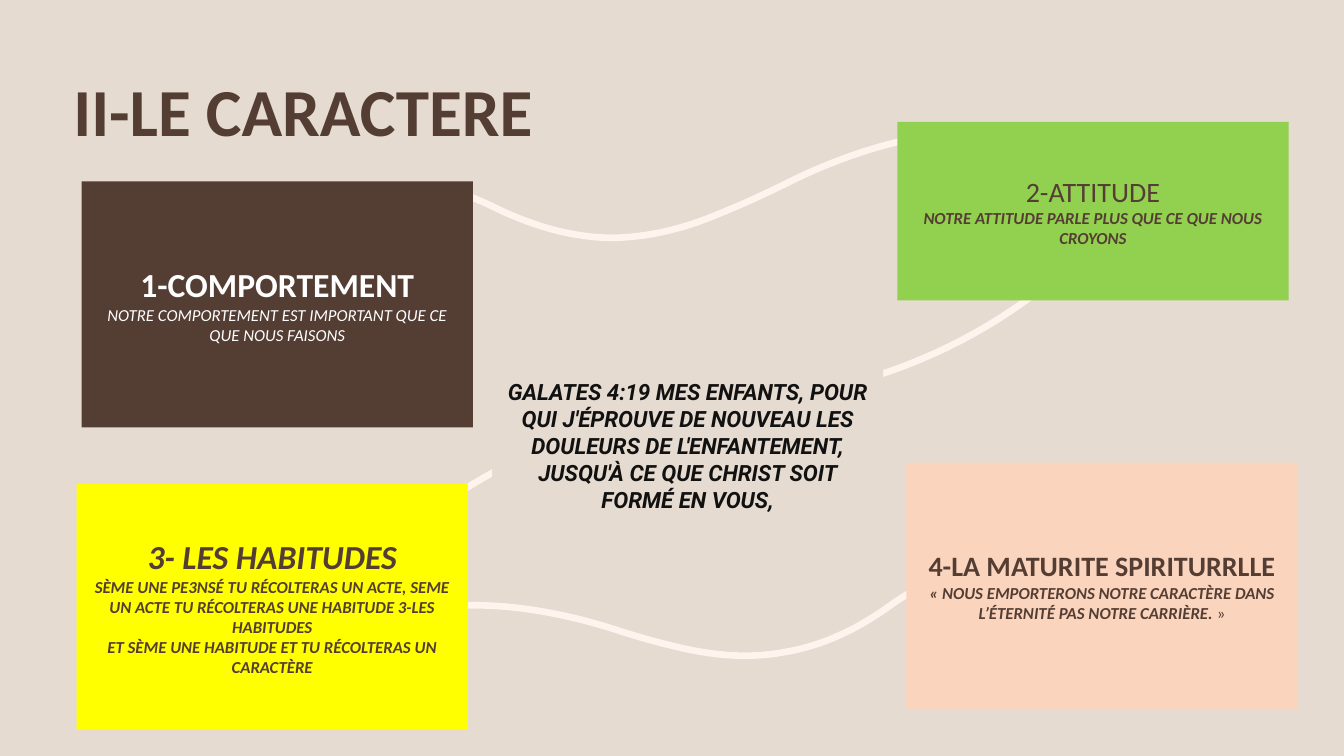
from dataclasses import dataclass

from pptx import Presentation
from pptx.dml.color import RGBColor
from pptx.enum.shapes import MSO_SHAPE
from pptx.enum.text import MSO_ANCHOR, PP_ALIGN
from pptx.oxml.ns import qn
from pptx.slide import Slide
from pptx.text.text import TextFrame
from pptx.util import Emu, Inches, Pt

RECTANGLE = MSO_SHAPE.RECTANGLE
MIDDLE = MSO_ANCHOR.MIDDLE
CENTER, LEFT = PP_ALIGN.CENTER, PP_ALIGN.LEFT

SLIDE_WIDTH, SLIDE_HEIGHT = Inches(13.33), Inches(7.5)
CELL = Inches(1) / 3  # the slide is 40 columns by 22.5 rows
CARD_COLUMNS, CARD_ROWS = 11.64, 7.32

SAND = RGBColor(0xE6, 0xDB, 0xD0)
CREAM = RGBColor(0xFE, 0xF3, 0xED)
BROWN = RGBColor(0x54, 0x3E, 0x34)
WHITE = RGBColor(0xFF, 0xFF, 0xFF)
GREEN = RGBColor(0x92, 0xD0, 0x50)
YELLOW = RGBColor(0xFF, 0xFF, 0x00)
PEACH = RGBColor(0xFB, 0xD4, 0xBE)
BLACK = RGBColor(0x11, 0x11, 0x11)

Point = tuple[float, float]


@dataclass(frozen=True)
class Line:
    text: str
    size: float
    bold: bool = False
    italic: bool = False
    plain_ending: str = ""


@dataclass(frozen=True)
class Card:
    column: float
    row: float
    fill: RGBColor
    lines: tuple[Line, ...]
    ink: RGBColor = BROWN
    font: str = "Calibri"
    rows: float = CARD_ROWS


TITLE = Line("II-LE CARACTERE", 48, bold=True)

CARDS = (
    Card(2.43, 5.4, BROWN, (
        Line("1-COMPORTEMENT", 24, bold=True),
        Line("NOTRE COMPORTEMENT EST IMPORTANT QUE CE QUE NOUS FAISONS", 12, italic=True),
    ), ink=WHITE),
    Card(26.7, 3.63, GREEN, (
        Line("2-ATTITUDE", 20),
        Line("NOTRE ATTITUDE PARLE PLUS QUE CE QUE NOUS CROYONS", 12, True, True),
    ), rows=5.31),
    Card(14.64, 9.6, SAND, (
        Line("GALATES 4:19 MES ENFANTS, POUR QUI J'ÉPROUVE DE NOUVEAU LES DOULEURS "
             "DE L'ENFANTEMENT, JUSQU'À CE QUE CHRIST SOIT FORMÉ EN VOUS,", 16, True, True),
    ), ink=BLACK, font="Roboto"),
    Card(2.28, 14.4, YELLOW, (
        Line("3- LES HABITUDES", 24, True, True),
        Line("SÈME UNE PE3NSÉ TU RÉCOLTERAS UN ACTE, SEME UN ACTE TU RÉCOLTERAS "
             "UNE HABITUDE 3-LES HABITUDES", 12, True, True),
        Line("ET SÈME UNE HABITUDE ET TU RÉCOLTERAS UN CARACTÈRE", 12, True, True),
    )),
    Card(26.97, 13.77, PEACH, (
        Line("4-LA MATURITE SPIRITURRLLE", 20, bold=True),
        Line("« NOUS EMPORTERONS NOTRE CARACTÈRE DANS L’ÉTERNITÉ PAS NOTRE CARRIÈRE. ",
             12, True, True, plain_ending="»"),
    )),
)

# Each curve: a start, then two control points and an end per segment.
CURVES: tuple[tuple[Point, ...], ...] = (
    ((25, 11.49), (27.39, 10.89), (29.55, 9.81), (31.41, 8.25)),
    ((17.52, 12.84), (15.27, 13.56), (13.35, 14.7), (11.67, 16.17)),
    ((9.21, 6.69), (10.5, 5.61), (11.94, 5.31), (13.47, 5.7),
     (13.98, 5.82), (14.43, 6.03), (14.91, 6.27),
     (15.9, 6.72), (16.95, 7.05), (18.12, 7.08),
     (19.11, 7.08), (20.1, 6.87), (21.03, 6.51),
     (22.11, 6.09), (22.71, 5.79), (23.34, 5.49),
     (24.03, 5.13), (28.2, 3.09), (30.81, 4.38)),
    ((27.6, 17.37), (27.12, 17.58), (26.73, 17.85), (26.31, 18.15),
     (25.44, 18.75), (24.45, 19.23), (23.34, 19.41),
     (22.38, 19.59), (21.42, 19.53), (20.43, 19.32),
     (19.35, 19.08), (18.72, 18.87), (18.06, 18.66),
     (17.34, 18.45), (13.02, 17.1), (10.41, 19.08)),
)


def cells(count: float) -> Emu:
    return Emu(round(count * CELL))


def draw_curve(slide: Slide, points: tuple[Point, ...]) -> None:
    """Draw the control points as a polyline, then join each three into a Bézier."""
    start, *others = [(cells(column), cells(row)) for column, row in points]
    builder = slide.shapes.build_freeform(*start)
    builder.add_line_segments(others, close=False)
    curve = builder.convert_to_shape()
    curve.shadow.inherit = False
    curve.fill.background()
    curve.line.color.rgb = CREAM
    curve.line.width = Pt(4.75)
    segments = list(curve.element.iter(qn("a:lnTo")))
    for first, second, third in zip(segments[::3], segments[1::3], segments[2::3]):
        first.tag = qn("a:cubicBezTo")
        for segment in (second, third):
            first.append(segment[0])
            segment.getparent().remove(segment)


def write_lines(frame: TextFrame, lines: tuple[Line, ...], ink: RGBColor,
                font: str, alignment: PP_ALIGN) -> None:
    frame.word_wrap = True
    frame.vertical_anchor = MIDDLE
    for index, line in enumerate(lines):
        para = frame.add_paragraph() if index else frame.paragraphs[0]
        para.alignment = alignment
        para.font.name = font
        para.font.size = Pt(line.size)
        para.font.color.rgb = ink
        spans = [(line.text, line.bold, line.italic)]
        if line.plain_ending:
            spans.append((line.plain_ending, False, False))
        else:
            para.font.bold, para.font.italic = line.bold, line.italic
        for text, bold, italic in spans:
            span = para.add_run()
            span.text = text
            span.font.name = font
            span.font.size = Pt(line.size)
            span.font.color.rgb = ink
            span.font.bold, span.font.italic = bold, italic


def draw_title(slide: Slide) -> None:
    box = slide.shapes.add_textbox(cells(1.89), cells(2.31), cells(30), cells(2.22))
    write_lines(box.text_frame, (TITLE,), BROWN, "Calibri", LEFT)
    box.text_frame.paragraphs[0].line_spacing = 0.9


def draw_card(slide: Slide, card: Card) -> None:
    box = slide.shapes.add_shape(RECTANGLE, cells(card.column), cells(card.row),
                                 cells(CARD_COLUMNS), cells(card.rows))
    box.shadow.inherit = False
    box.fill.solid()
    box.fill.fore_color.rgb = card.fill
    box.line.fill.background()
    write_lines(box.text_frame, card.lines, card.ink, card.font, CENTER)


def main() -> None:
    deck = Presentation()
    deck.slide_width, deck.slide_height = SLIDE_WIDTH, SLIDE_HEIGHT
    page = deck.slides.add_slide(deck.slide_layouts[6])
    page.background.fill.solid()
    page.background.fill.fore_color.rgb = SAND
    for points in CURVES:
        draw_curve(page, points)
    draw_title(page)
    for card in CARDS:
        draw_card(page, card)
    deck.save("out.pptx")


if __name__ == "__main__":
    main()
